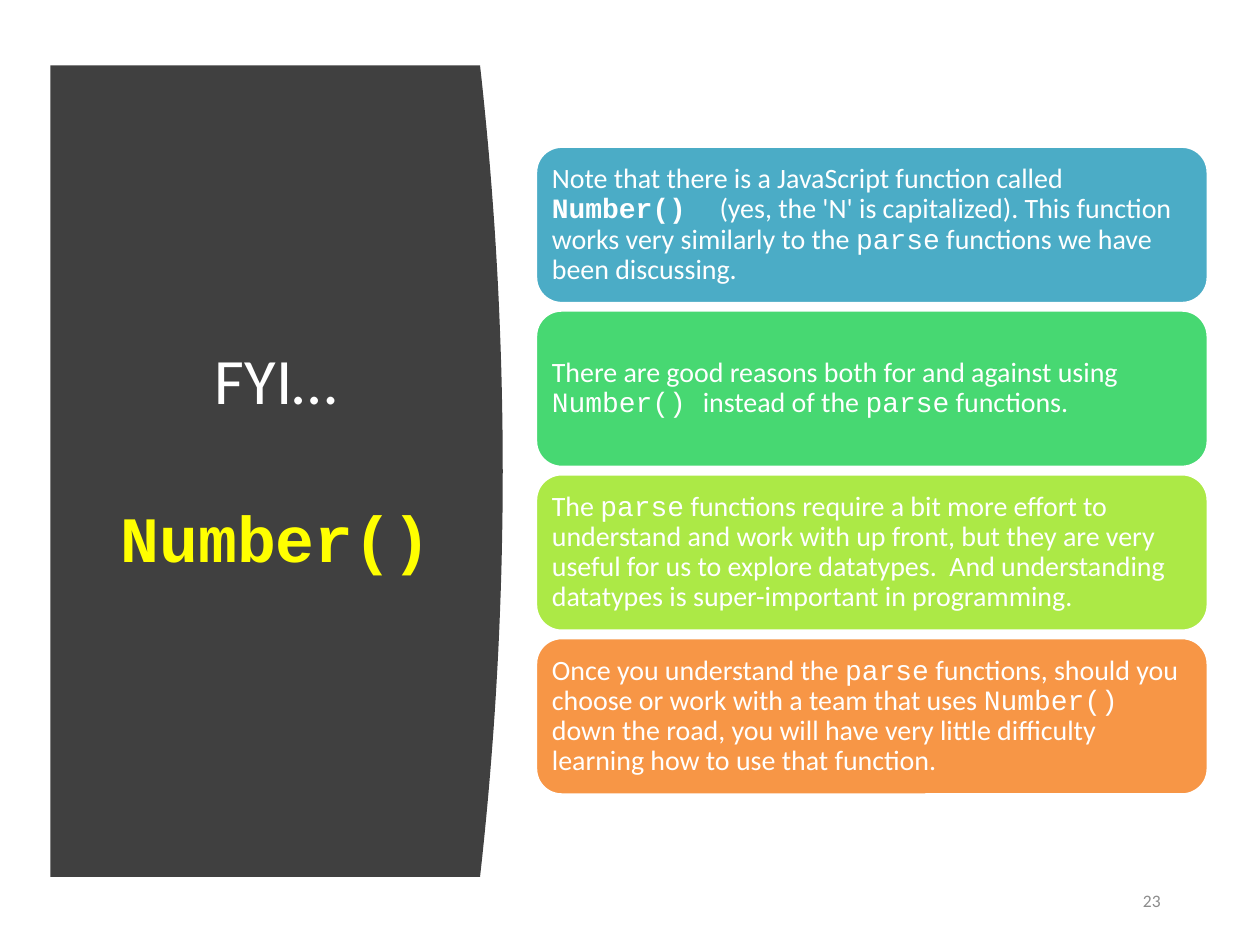
"""Build the slide on the Number() function."""
from pptx import Presentation
from pptx.dml.color import RGBColor as Rgb
from pptx.enum.shapes import MSO_SHAPE as Kind
from pptx.enum.text import MSO_ANCHOR as Anchor, MSO_AUTO_SIZE as Fit, PP_ALIGN as Align
from pptx.util import Inches, Pt

HUES = {
    "panel": "404040", "white": "FFFFFF", "yellow": "FFFF00", "gray": "8C8C8C",
    "blue": "4BACC6", "green": "47D872", "lime": "ACE946", "orange": "F79646",
}
SANS, MONO = "Calibri", "Courier New"
CARDS = [
    ("blue", [
        ("Note that there is a JavaScript function called ", SANS, False),
        ("Number()  ", MONO, True),
        ("(yes, the 'N' is capitalized). This function works very similarly to the ", SANS, False),
        ("parse", MONO, False),
        (" functions we have been discussing.", SANS, False),
    ]),
    ("green", [
        ("There are good reasons both for and against using ", SANS, False),
        ("Number() ", MONO, False),
        ("instead of the ", SANS, False),
        ("parse", MONO, False),
        (" functions.", SANS, False),
    ]),
    ("lime", [
        ("The ", SANS, False),
        ("parse", MONO, False),
        (" functions require a bit more effort to understand and work with up front, "
         "but they are very useful for us to explore datatypes.  And understanding "
         "datatypes is super-important in programming.", SANS, False),
    ]),
    ("orange", [
        ("Once you understand the ", SANS, False),
        ("parse", MONO, False),
        (" functions, should you choose or work with a team that uses ", SANS, False),
        ("Number() ", MONO, False),
        ("down the road, you will have very little difficulty learning how to use "
         "that function.", SANS, False),
    ]),
]


def tint(hue):
    return Rgb.from_string(HUES[hue])


def paint(shape, hue):
    shape.shadow.inherit = False
    shape.fill.solid()
    shape.fill.fore_color.rgb = tint(hue)


def add_run(para, text, size, face, hue, bold=False):
    run = para.add_run()
    run.text = text
    font = run.font
    font.size, font.name, font.bold = Pt(size), face, bold
    font.color.rgb = tint(hue)


def set_frame(shape, inset=None):
    frame = shape.text_frame
    frame.word_wrap = True
    frame.auto_size = Fit.NONE
    frame.vertical_anchor = Anchor.MIDDLE
    if inset is not None:
        frame.margin_left = frame.margin_right = Inches(inset)
        frame.margin_top = frame.margin_bottom = Inches(inset)
    return frame


def add_panel(slide):
    left, edge, top, low, bulge, steps = 0.4, 3.81, 0.52, 6.96, 0.18, 40
    curve = []
    for i in range(steps + 1):
        t = i / steps
        x = edge + bulge * (1 - (2 * t - 1) ** 2)
        curve.append((Inches(x), Inches(top + (low - top) * t)))
    build = slide.shapes.build_freeform(Inches(left), Inches(top))
    build.add_line_segments(curve + [(Inches(left), Inches(low))], close=True)
    panel = build.convert_to_shape()
    paint(panel, "panel")
    panel.line.fill.background()


def set_title(slide):
    title = slide.shapes.title
    title.left, title.top = Inches(0.79), Inches(2.42)
    title.width, title.height = Inches(2.8), Inches(2.42)
    frame = set_frame(title)
    head, name = frame.paragraphs[0], frame.add_paragraph()
    head.alignment = name.alignment = Align.CENTER
    name.space_before = Pt(46)
    add_run(head, "FYI…", 37, SANS, "white")
    add_run(name, "Number()", 37, MONO, "yellow", True)


def add_card(slide, top, hue, parts):
    card = slide.shapes.add_shape(
        Kind.ROUNDED_RECTANGLE, Inches(4.25), Inches(top), Inches(5.34), Inches(1.25))
    paint(card, hue)
    card.line.color.rgb = tint("white")
    card.line.width = Pt(2)
    para = set_frame(card, 0.07).paragraphs[0]
    para.alignment = Align.LEFT
    para.line_spacing = 0.9
    for text, face, bold in parts:
        add_run(para, text, 16, face, "white", bold)


def add_number(slide):
    box = slide.shapes.add_textbox(Inches(8.8), Inches(6.95), Inches(0.51), Inches(0.4))
    para = set_frame(box).paragraphs[0]
    para.alignment = Align.RIGHT
    para.space_after = Pt(6)
    add_run(para, "23", 10, SANS, "gray")


def main():
    deck = Presentation()
    deck.slide_width, deck.slide_height = Inches(10), Inches(7.5)
    slide = deck.slides.add_slide(deck.slide_layouts[5])
    add_panel(slide)
    set_title(slide)
    tree = slide.shapes.title.element.getparent()
    tree.append(slide.shapes.title.element)
    add_number(slide)
    for i, (hue, parts) in enumerate(CARDS):
        add_card(slide, 1.16 + 1.3 * i, hue, parts)
    deck.save("out.pptx")


if __name__ == "__main__":
    main()
